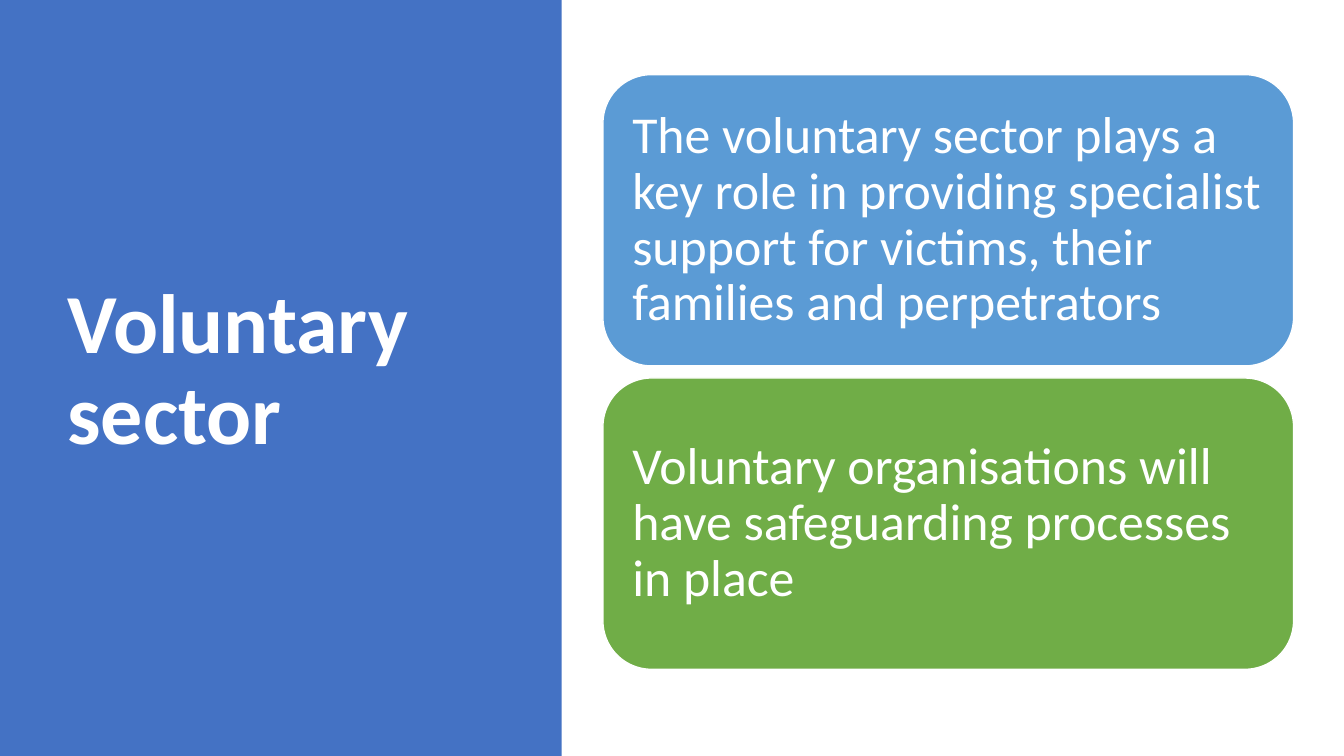
from dataclasses import dataclass

from pptx import Presentation
from pptx.dml.color import RGBColor
from pptx.enum.shapes import MSO_SHAPE as Shape
from pptx.enum.text import MSO_ANCHOR as Anchor, PP_ALIGN as Align
from pptx.util import Inches, Pt


@dataclass(frozen=True)
class Theme:
    """Colours, font and type sizes of the slide."""
    white: str = "FFFFFF"
    panel: str = "4472C4"
    blue: str = "5B9BD5"
    green: str = "70AD47"
    font: str = "Calibri"
    title_size: int = 60
    card_size: int = 37


THEME = Theme()
CARD_TOP = 0.74
CARD_PITCH = 3.01
CARDS = [
    ("The voluntary sector plays a key role in providing specialist support "
     "for victims, their families and perpetrators", THEME.blue),
    ("Voluntary organisations will have safeguarding processes in place", THEME.green),
]


def add_block(slide, kind, box, fill, line=None):
    """Add a filled shape, outlined when a line colour is given."""
    shape = slide.shapes.add_shape(kind, *map(Inches, box))
    shape.shadow.inherit = False
    shape.fill.solid()
    shape.fill.fore_color.rgb = RGBColor.from_string(fill)
    if line:
        shape.line.color.rgb = RGBColor.from_string(line)
        shape.line.width = Pt(1)
    else:
        shape.line.fill.background()
    return shape


def write_text(shape, text, size, bold=False, inset=(0.1, 0.05)):
    """Write one left-aligned, vertically centred white paragraph."""
    frame = shape.text_frame
    frame.word_wrap = True
    frame.vertical_anchor = Anchor.MIDDLE
    frame.margin_left = frame.margin_right = Inches(inset[0])
    frame.margin_top = frame.margin_bottom = Inches(inset[1])
    paragraph = frame.paragraphs[0]
    paragraph.alignment = Align.LEFT
    paragraph.line_spacing = 0.9
    run = paragraph.add_run()
    run.text = text
    run.font.name = THEME.font
    run.font.size = Pt(size)
    run.font.bold = bold
    run.font.color.rgb = RGBColor.from_string(THEME.white)


def add_title(slide, text):
    """Add the side panel with the title over it."""
    add_block(slide, Shape.RECTANGLE, (0, 0, 5.57, 7.5), THEME.panel)
    title = slide.shapes.add_textbox(*map(Inches, (0.57, 0.68, 4.16, 6.02)))
    write_text(title, text, THEME.title_size, bold=True)


def add_card(slide, top, text, fill):
    """Add a rounded card holding one statement."""
    card = add_block(slide, Shape.ROUNDED_RECTANGLE, (5.98, top, 6.85, 2.89), fill, THEME.white)
    write_text(card, text, THEME.card_size, inset=(0.15, 0.15))


def main():
    """Build the slide and save it."""
    presentation = Presentation()
    presentation.slide_width = Inches(13.33)
    presentation.slide_height = Inches(7.5)
    slide = presentation.slides.add_slide(presentation.slide_layouts[6])
    add_title(slide, "Voluntary sector")
    for index, (text, fill) in enumerate(CARDS):
        add_card(slide, CARD_TOP + index * CARD_PITCH, text, fill)
    presentation.save("out.pptx")


if __name__ == "__main__":
    main()
